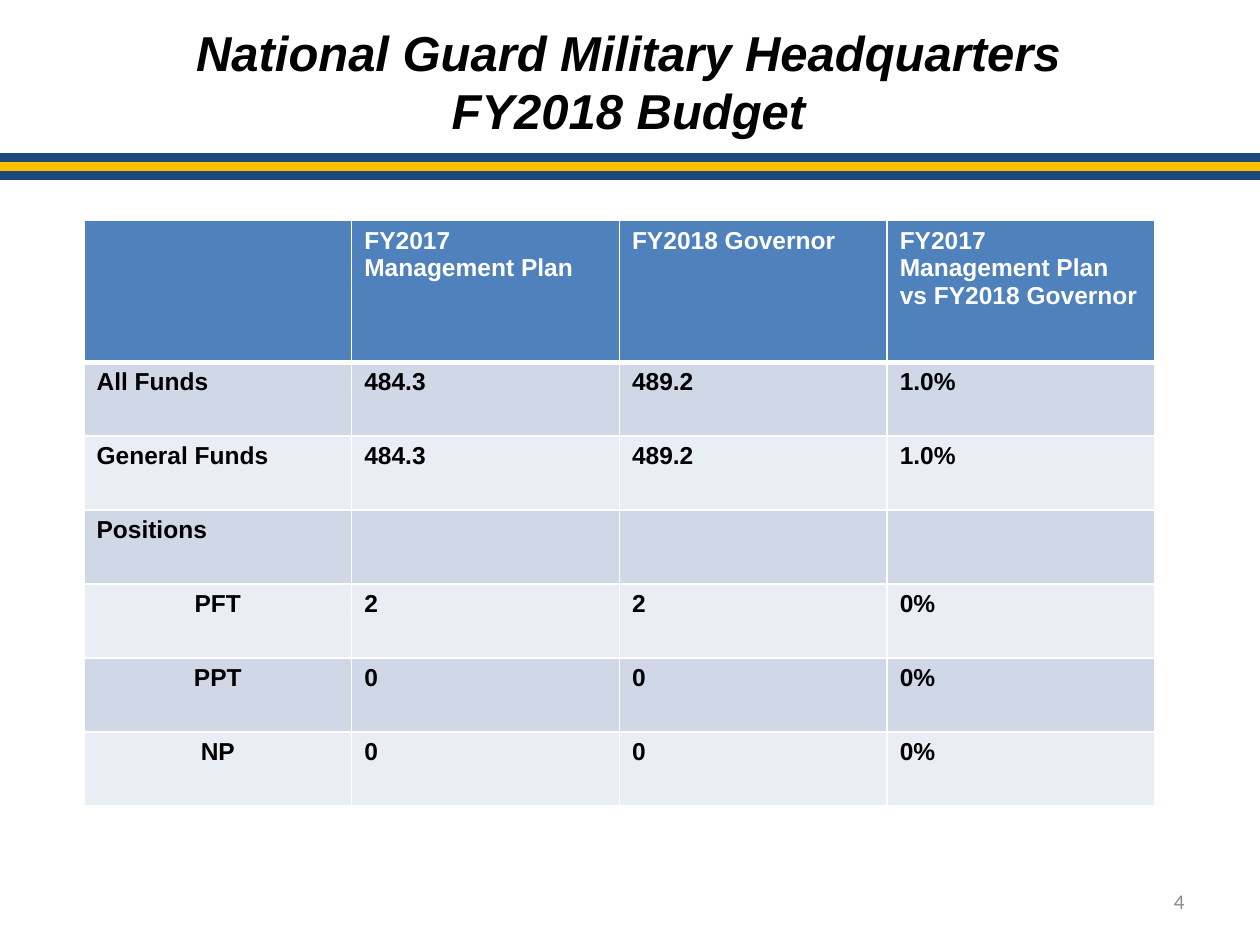
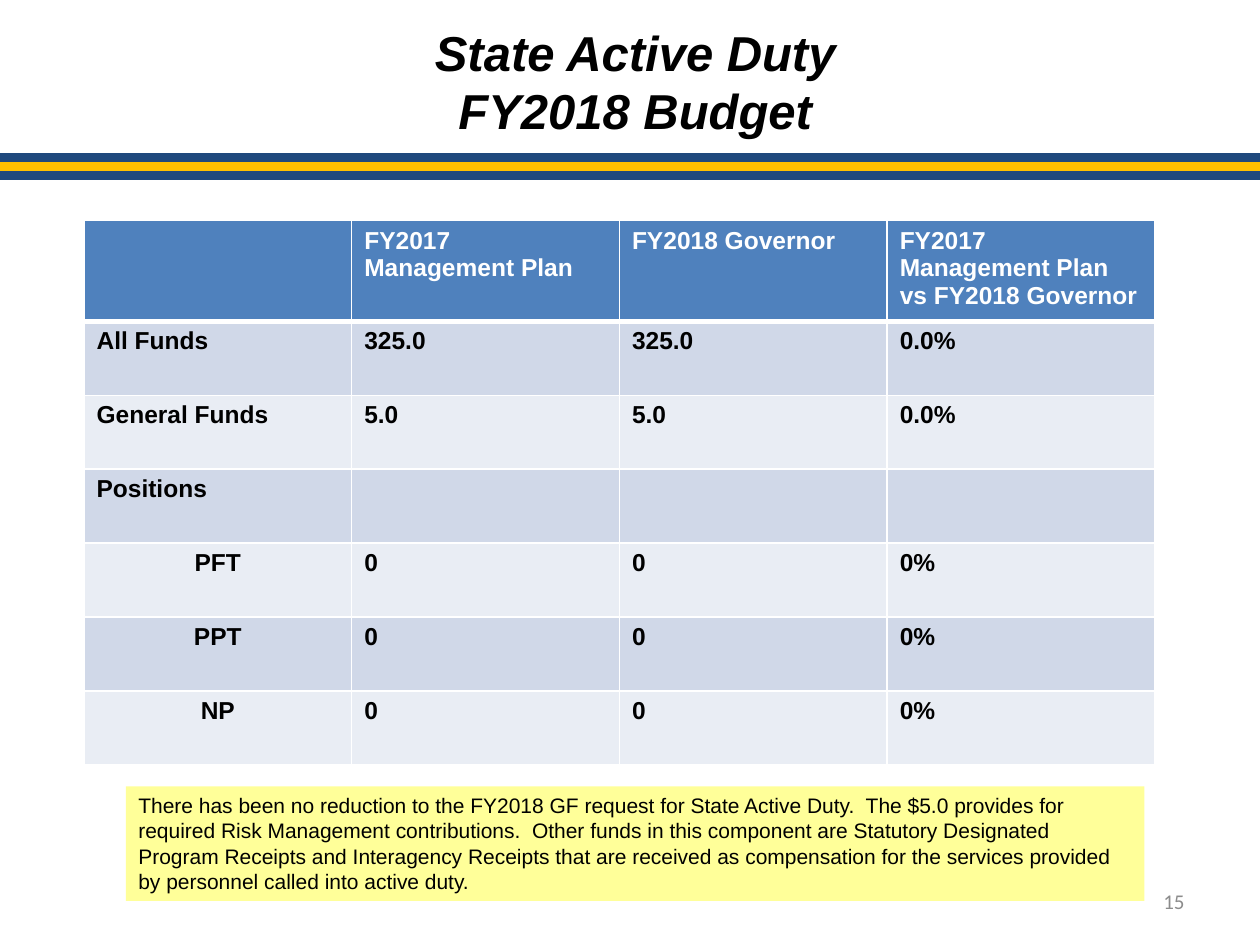
import pptx
import pptx.dml.color
import pptx.enum.shapes
import pptx.enum.text
import pptx.oxml
import pptx.oxml.ns
import pptx.util
import lxml.etree

RGBColor = pptx.dml.color.RGBColor
NAVY = RGBColor(0x1F, 0x49, 0x7D)
GOLD = RGBColor(0xFF, 0xC0, 0x00)
BLUE = RGBColor(0x4F, 0x81, 0xBD)
BAND_DARK = RGBColor(0xD0, 0xD8, 0xE8)
BAND_LIGHT = RGBColor(0xE9, 0xED, 0xF4)
YELLOW = RGBColor(0xFF, 0xFF, 0x99)
GRAY = RGBColor(0x8C, 0x8C, 0x8C)
BLACK = RGBColor(0, 0, 0)
WHITE = RGBColor(0xFF, 0xFF, 0xFF)

LEFT = pptx.enum.text.PP_ALIGN.LEFT
CENTER = pptx.enum.text.PP_ALIGN.CENTER
RIGHT = pptx.enum.text.PP_ALIGN.RIGHT
TOP = pptx.enum.text.MSO_ANCHOR.TOP
MIDDLE = pptx.enum.text.MSO_ANCHOR.MIDDLE

GRID_COLUMNS = 120
GRID_ROWS = 90
BODY_ROW = 7.04
HEADINGS = ["", "FY2017 Management Plan", "FY2018 Governor",
            "FY2017 Management Plan vs FY2018 Governor"]
POSITION_TYPES = ("PFT", "PPT", "NP")


class BudgetDeck:
    def __init__(self):
        self.deck = pptx.Presentation()
        self.deck.slide_width = pptx.util.Inches(10)
        self.deck.slide_height = pptx.util.Inches(7.5)
        self.page = None

    def across(self, columns):
        return round(self.deck.slide_width * columns / GRID_COLUMNS)

    def down(self, rows):
        return round(self.deck.slide_height * rows / GRID_ROWS)

    def area(self, left, top, width, height):
        return self.across(left), self.down(top), self.across(width), self.down(height)

    def start_page(self, title_lines, number):
        self.page = self.deck.slides.add_slide(self.deck.slide_layouts[5])
        for index, color in enumerate((NAVY, GOLD, NAVY)):
            self.stripe(15 + 0.85 * index, color)
        self.title(title_lines)
        self.page_number(number)

    def stripe(self, row, color):
        line = self.page.shapes.add_connector(
            pptx.enum.shapes.MSO_CONNECTOR.STRAIGHT,
            0, self.down(row), self.across(GRID_COLUMNS), self.down(row))
        line.line.color.rgb = color
        line.line.width = pptx.util.Pt(5)
        lxml.etree.SubElement(line._element.spPr, pptx.oxml.ns.qn("a:effectLst"))

    def add_lines(self, frame, lines, size, color=BLACK, align=LEFT, anchor=TOP,
                  name="Arial", bold=False, italic=False):
        frame.word_wrap = True
        frame.vertical_anchor = anchor
        for index, line in enumerate(lines):
            para = frame.add_paragraph() if index else frame.paragraphs[0]
            para.alignment = align
            span = para.add_run()
            span.text = line
            span.font.name = name
            span.font.size = pptx.util.Pt(size)
            span.font.bold = bold
            span.font.italic = italic
            span.font.color.rgb = color

    def title(self, lines):
        box = self.page.shapes.title
        box.left, box.top, box.width, box.height = self.area(14, 1.5, 93, 12.5)
        box.text_frame.auto_size = pptx.enum.text.MSO_AUTO_SIZE.NONE
        self.add_lines(box.text_frame, lines, 28, align=CENTER, bold=True, italic=True)

    def page_number(self, number):
        box = self.page.shapes.add_textbox(*self.area(86, 83.4, 28, 4.8))
        self.add_lines(box.text_frame, [str(number)], 12, GRAY, RIGHT, MIDDLE, "Calibri")

    def note(self, text):
        box = self.page.shapes.add_shape(
            pptx.enum.shapes.MSO_SHAPE.RECTANGLE, *self.area(12, 74.9, 97, 10.9))
        box.shadow.inherit = False
        box.fill.solid()
        box.fill.fore_color.rgb = YELLOW
        box.line.fill.background()
        self.add_lines(box.text_frame, [text], 12)

    def cell_borders(self, cell, top, bottom):
        properties = cell._tc.get_or_add_tcPr()
        widths = {"lnL": 1, "lnR": 1, "lnT": top, "lnB": bottom}
        for index, (side, width) in enumerate(widths.items()):
            border = pptx.oxml.parse_xml(
                f'<a:{side} {pptx.oxml.ns.nsdecls("a")} w="{pptx.util.Pt(width)}">'
                f'<a:solidFill><a:srgbClr val="{WHITE}"/></a:solidFill></a:{side}>')
            properties.insert(index, border)

    def budget_table(self, body, header_rows):
        entries = [HEADINGS] + body
        height = header_rows + BODY_ROW * len(body)
        table = self.page.shapes.add_table(
            len(entries), len(HEADINGS), *self.area(8, 21, 102, height)).table
        table.first_row = False
        table.horz_banding = False
        for row_index, entry in enumerate(entries):
            is_header = row_index == 0
            table.rows[row_index].height = self.down(header_rows if is_header else BODY_ROW)
            fill = BLUE if is_header else (BAND_LIGHT, BAND_DARK)[row_index % 2]
            for column_index, text in enumerate(entry):
                cell = table.cell(row_index, column_index)
                cell.fill.solid()
                cell.fill.fore_color.rgb = fill
                self.cell_borders(cell, 3 if row_index == 1 else 1, 3 if is_header else 1)
                if text:
                    self.add_lines(cell.text_frame, [text], 14, WHITE if is_header else BLACK,
                                   CENTER if text in POSITION_TYPES else LEFT, bold=True)


def budget_rows(all_funds, general_funds, full_time):
    none = ["0", "0", "0%"]
    counts = (full_time, none, none)
    return [["All Funds"] + all_funds,
            ["General Funds"] + general_funds,
            ["Positions", "", "", ""],
            *([kind] + count for kind, count in zip(POSITION_TYPES, counts))]


def main():
    budget = BudgetDeck()

    budget.start_page(["National Guard Military Headquarters ", "FY2018 Budget "], 4)
    headquarters_funds = ["484.3", "489.2", "1.0%"]
    budget.budget_table(
        budget_rows(headquarters_funds, headquarters_funds, ["2", "2", "0%"]), 13.5)

    budget.start_page(["State Active Duty", "FY2018 Budget"], 15)
    budget.budget_table(
        budget_rows(["325.0", "325.0", "0.0%"], ["5.0", "5.0", "0.0%"], ["0", "0", "0%"]), 9.6)
    budget.note(
        "There has been no reduction to the FY2018 GF request for State Active Duty.  "
        "The $5.0 provides for required Risk Management contributions.  "
        "Other funds in this component are Statutory Designated Program Receipts and "
        "Interagency Receipts that are received as compensation for the services provided "
        "by personnel called into active duty.")

    budget.deck.save("out.pptx")


if __name__ == "__main__":
    main()
